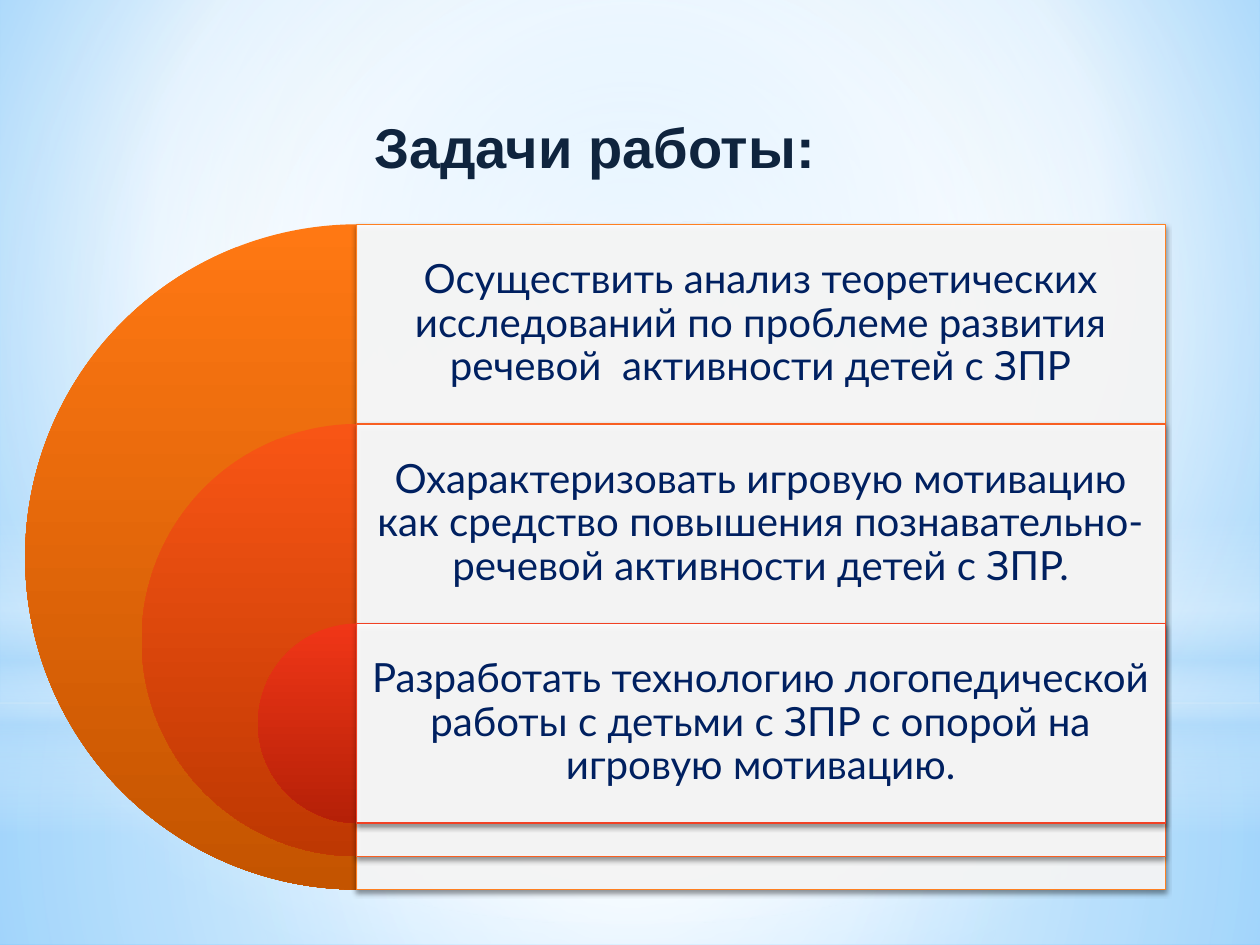
"""Builds a slide listing the tasks of the study beside nested half discs."""
import pptx
import pptx.dml.color
import pptx.enum.shapes
import pptx.enum.text
import pptx.oxml
import pptx.oxml.ns
import pptx.util
from pptx.util import Inches, Pt

TITLE = "Задачи работы:"
TASKS = [
    ("Осуществить анализ теоретических исследований по проблеме развития речевой  активности детей с ЗПР",
     "FF7813", "C45400", "FF8021"),
    ("Охарактеризовать игровую мотивацию как средство повышения познавательно-речевой активности детей с ЗПР.",
     "F85515", "BE3802", "F85F22"),
    ("Разработать технологию логопедической работы с детьми с ЗПР с опорой на игровую мотивацию.",
     "F03617", "B52007", "F14124"),
]
THEME = {
    "title": ("Arial", 32, "0F243E"),
    "task": ("Lato", 23, "002060"),
    "panel": "FFFFFF",
    "background": [(0, "9ED5FF", 100), (60, "FFFFFF", 100), (100, "5BB9FF", 100)],
}
SHAPE = pptx.enum.shapes.MSO_SHAPE
CENTRE = (50, 50, 50, 50)
BACKDROP = [
    (SHAPE.RECTANGLE, (0, 5.58, 10, 1.92), CENTRE,
     [(0, "FFFFFF", 91), (37, "FFFFFF", 76), (100, "B4DCFA", 79)]),
    (SHAPE.RECTANGLE, (0, 0, 10, 5.58), CENTRE,
     [(0, "FFFFFF", 89), (48, "FFFFFF", 62), (100, "B4DCFA", 79)]),
    (SHAPE.RECTANGLE, (0, 4.12, 10, 2.5), None,
     [(0, "FFFFFF", 0), (29, "FFFFFF", 30), (45, "B4DCFA", 40),
      (55, "FFFFFF", 26), (65, "B4DCFA", 60), (100, "FFFFFF", 0)]),
    (SHAPE.OVAL, (0, 1.75, 10, 5.58), CENTRE, [(0, "FFFFFF", 100), (56, "FFFFFF", 0)]),
]
DISC_LEFT, DISC_TOP, DISC_SIZE = 0.2, 1.78, 5.28
ROW_SHARE, SHRINK = 0.3, 0.35
PANEL_LEFT, PANEL_WIDTH = 2.83, 6.42
NS = pptx.oxml.ns.nsdecls("a")


def rgb(value):
    return pptx.dml.color.RGBColor.from_string(value)


def set_gradient(fill, root, stops, focus=None):
    fill.gradient()
    grad = root.find(".//" + pptx.oxml.ns.qn("a:gradFill"))
    gs = "".join(
        f'<a:gs pos="{pos * 1000}"><a:srgbClr val="{color}"><a:alpha val="{alpha * 1000}"/></a:srgbClr></a:gs>'
        for pos, color, alpha in stops)
    if focus:
        rect = " ".join(f'{side}="{v * 1000}"' for side, v in zip("ltrb", focus))
        course = f'<a:path path="circle"><a:fillToRect {rect}/></a:path>'
    else:
        course = '<a:lin ang="5400000" scaled="0"/>'
    new = pptx.oxml.parse_xml(
        f'<a:gradFill {NS} rotWithShape="1"><a:gsLst>{gs}</a:gsLst>{course}</a:gradFill>')
    grad[:] = list(new)


def add_shape(s, kind, box):
    sp = s.shapes.add_shape(kind, *map(Inches, box))
    sp.shadow.inherit = False
    sp.line.fill.background()
    return sp


def add_panel(s, box, line):
    sp = add_shape(s, SHAPE.RECTANGLE, box)
    sp.fill.solid()
    sp.fill.fore_color.rgb = rgb(THEME["panel"])
    color = sp._element.spPr.find(".//" + pptx.oxml.ns.qn("a:srgbClr"))
    color.append(pptx.oxml.parse_xml(f'<a:alpha {NS} val="90000"/>'))
    sp.line.color.rgb = rgb(line)
    sp.line.width = Pt(0.75)
    effects = sp._element.spPr.find(pptx.oxml.ns.qn("a:effectLst"))
    effects.append(pptx.oxml.parse_xml(
        f'<a:outerShdw {NS} blurRad="{Pt(3.1)}" dist="{Pt(1.8)}" dir="5400000" rotWithShape="0">'
        '<a:srgbClr val="000000"><a:alpha val="45000"/></a:srgbClr></a:outerShdw>'))


def set_text(sp, text, style, align, anchor, bold=False):
    tf = sp.text_frame
    tf.text = text
    tf.vertical_anchor = anchor
    p = tf.paragraphs[0]
    p.alignment = align
    font = p.runs[0].font
    font.name, size, color = THEME[style]
    font.size, font.bold = Pt(size), bold
    font.color.rgb = rgb(color)
    return tf


def add_task(s, box, text):
    tf = set_text(s.shapes.add_textbox(*map(Inches, box)), text, "task",
                  pptx.enum.text.PP_ALIGN.CENTER, pptx.enum.text.MSO_ANCHOR.MIDDLE)
    tf.word_wrap = True
    tf.margin_left = tf.margin_right = tf.margin_top = tf.margin_bottom = Inches(0.1)
    tf.paragraphs[0].line_spacing = 0.9


def main():
    prs = pptx.Presentation()
    prs.slide_width, prs.slide_height = Inches(10), Inches(7.5)
    s = prs.slides.add_slide(prs.slide_layouts[5])
    set_gradient(s.background.fill, s._element, THEME["background"], (20, 10, 20, 60))
    for kind, box, focus, stops in BACKDROP:
        sp = add_shape(s, kind, box)
        set_gradient(sp.fill, sp._element, stops, focus)

    title = s.shapes.title
    s.shapes._spTree.append(title._element)
    title.left, title.top, title.width, title.height = map(Inches, (2.87, 0.84, 3.73, 0.64))
    tf = set_text(title, TITLE, "title", pptx.enum.text.PP_ALIGN.LEFT,
                  pptx.enum.text.MSO_ANCHOR.TOP, bold=True)
    tf.word_wrap = False
    tf.auto_size = pptx.enum.text.MSO_AUTO_SIZE.SHAPE_TO_FIT_TEXT

    row = DISC_SIZE * ROW_SHARE
    for i, (text, light, dark, line) in enumerate(TASKS):
        size = DISC_SIZE * (1 - SHRINK * i)
        left = DISC_LEFT + (DISC_SIZE - size) / 2
        top = DISC_TOP + row * i
        disc = add_shape(s, SHAPE.PIE, (left, top, size, size))
        disc.adjustments[0], disc.adjustments[1] = 54, 162
        set_gradient(disc.fill, disc._element, [(0, light, 100), (100, dark, 100)])
        add_panel(s, (PANEL_LEFT, top, PANEL_WIDTH, size), line)
        add_task(s, (PANEL_LEFT, top, PANEL_WIDTH, row), text)
    prs.save("out.pptx")


if __name__ == "__main__":
    main()
